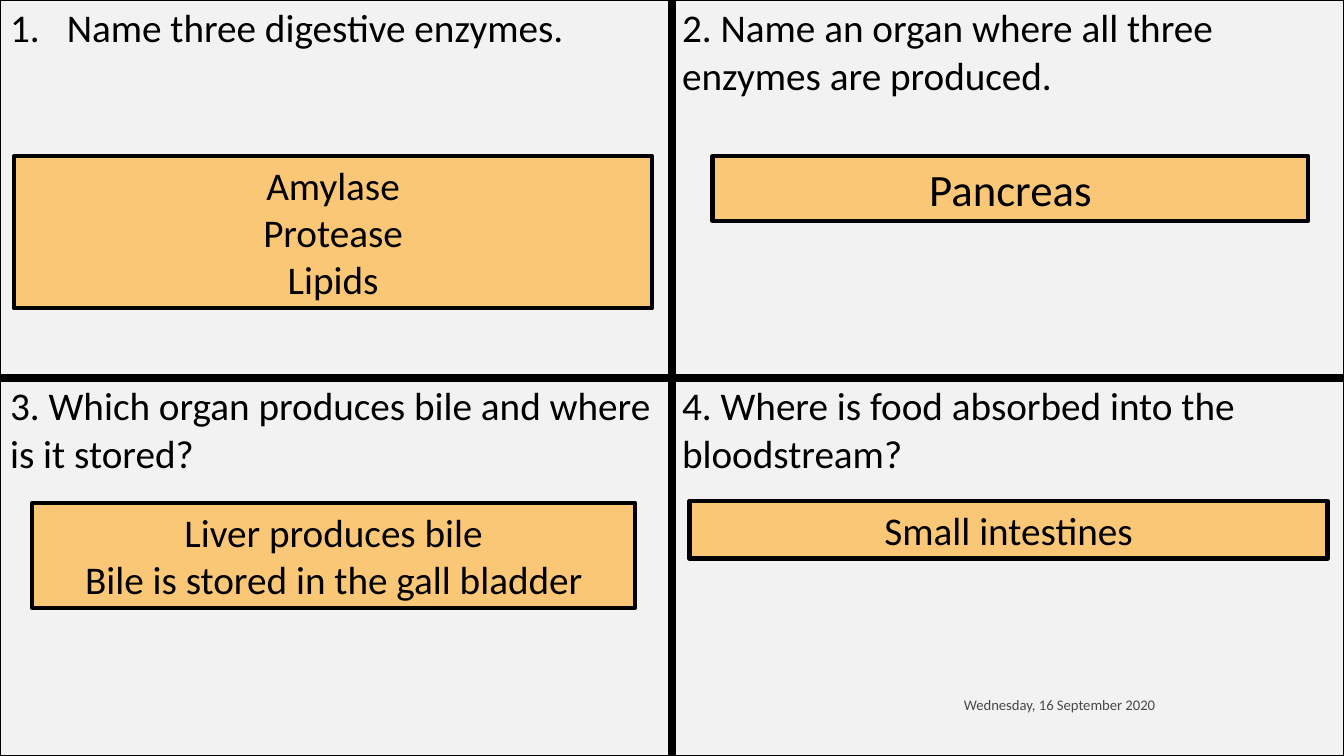
from lxml import etree
from pptx import Presentation
from pptx import util as u
from pptx.dml.color import RGBColor
from pptx.enum import shapes, text
from pptx.oxml.ns import qn

COLORS = {"paper": "F2F2F2", "ink": "000000", "answer": "FAC777"}
FONT = "Calibri"
WIDTH, HEIGHT = 960, 540
THIN, THICK = 1, 6


def rgb(name):
    return RGBColor.from_string(COLORS[name])


def write(tf, content, size=28, align=text.PP_ALIGN.LEFT, anchor=None, alpha=None):
    """Fill a text frame, one paragraph for each line of content."""
    tf.word_wrap = True
    if anchor is not None:
        tf.vertical_anchor = anchor
    for i, line in enumerate(content.split("\n")):
        p = tf.paragraphs[0] if i == 0 else tf.add_paragraph()
        p.alignment = align
        r = p.add_run()
        r.text = line
        r.font.size, r.font.name = u.Pt(size), FONT
        r.font.color.rgb = rgb("ink")
        if alpha:
            color = r.font.fill._xPr.find(".//" + qn("a:srgbClr"))
            etree.SubElement(color, qn("a:alpha"), val=str(alpha * 1000))


class QuizSlide:
    def __init__(self, prs):
        self.s = prs.slides.add_slide(prs.slide_layouts[6])
        self.s.background.fill.solid()
        self.s.background.fill.fore_color.rgb = rgb("paper")

    def label(self, content, x, y, w, h, **fmt):
        sp = self.s.shapes.add_textbox(*map(u.Pt, (x, y, w, h)))
        write(sp.text_frame, content, **fmt)

    def answer(self, content, x, y, w, h, **fmt):
        sp = self.s.shapes.add_shape(
            shapes.MSO_SHAPE.RECTANGLE, *map(u.Pt, (x, y, w, h)))
        sp.shadow.inherit = False
        sp.fill.solid()
        sp.fill.fore_color.rgb = rgb("answer")
        sp.line.color.rgb = rgb("ink")
        sp.line.width = u.Pt(3)
        write(sp.text_frame, content, align=text.PP_ALIGN.CENTER,
              anchor=text.MSO_ANCHOR.TOP, **fmt)
        sp.text_frame.auto_size = text.MSO_AUTO_SIZE.SHAPE_TO_FIT_TEXT

    def grid(self, rows):
        n_rows, n_cols = len(rows), len(rows[0])
        table = self.s.shapes.add_table(
            n_rows, n_cols, 0, 0, u.Pt(WIDTH), u.Pt(HEIGHT)).table
        table.first_row = table.horz_banding = False
        for i, row in enumerate(rows):
            table.rows[i].height = u.Pt(HEIGHT / n_rows)
            for j, question in enumerate(row):
                cell = table.cell(i, j)
                write(cell.text_frame, question)
                cell.fill.background()
                # Thin on the outer edge, thick between the cells
                outer = {"L": j == 0, "R": j == n_cols - 1,
                         "T": i == 0, "B": i == n_rows - 1}
                self.borders(cell, {k: THIN if v else THICK for k, v in outer.items()})
        return table

    def borders(self, cell, widths):
        tcPr = cell._tc.get_or_add_tcPr()
        for i, (side, width) in enumerate(widths.items()):
            ln = etree.Element(qn("a:ln" + side), w=str(u.Pt(width)))
            fill = etree.SubElement(ln, qn("a:solidFill"))
            etree.SubElement(fill, qn("a:srgbClr"), val=COLORS["ink"])
            tcPr.insert(i, ln)

    def number(self, p, indent):
        pPr = p._p.get_or_add_pPr()
        pPr.set("marL", str(u.Pt(indent)))
        pPr.set("indent", str(-u.Pt(indent)))
        etree.SubElement(pPr, qn("a:buAutoNum"), type="arabicPeriod")


def main():
    prs = Presentation()
    prs.slide_width, prs.slide_height = u.Pt(WIDTH), u.Pt(HEIGHT)
    quiz = QuizSlide(prs)

    # Date, behind the grid
    quiz.label("Wednesday, 16 September 2020", 615.6, 491, 216.7, 25.2, size=10.5,
               align=text.PP_ALIGN.RIGHT, anchor=text.MSO_ANCHOR.MIDDLE, alpha=70)

    # Questions
    table = quiz.grid([
        ["Name three digestive enzymes.",
         "2. Name an organ where all three enzymes are produced."],
        ["3. Which organ produces bile and where is it stored?",
         "4. Where is food absorbed into the bloodstream?"],
    ])
    quiz.number(table.cell(0, 0).text_frame.paragraphs[0], 40.5)

    # Answers
    quiz.answer("Amylase\nProtease\nLipids", 10, 111.6, 455.8, 108.7)
    quiz.answer("Pancreas", 509, 111.6, 425.5, 46, size=32)
    quiz.answer("Liver produces bile\nBile is stored in the gall bladder",
                23, 359.3, 430.6, 75)
    quiz.answer("Small intestines", 492.5, 357.8, 455.8, 41.2)

    prs.save("out.pptx")


if __name__ == "__main__":
    main()
